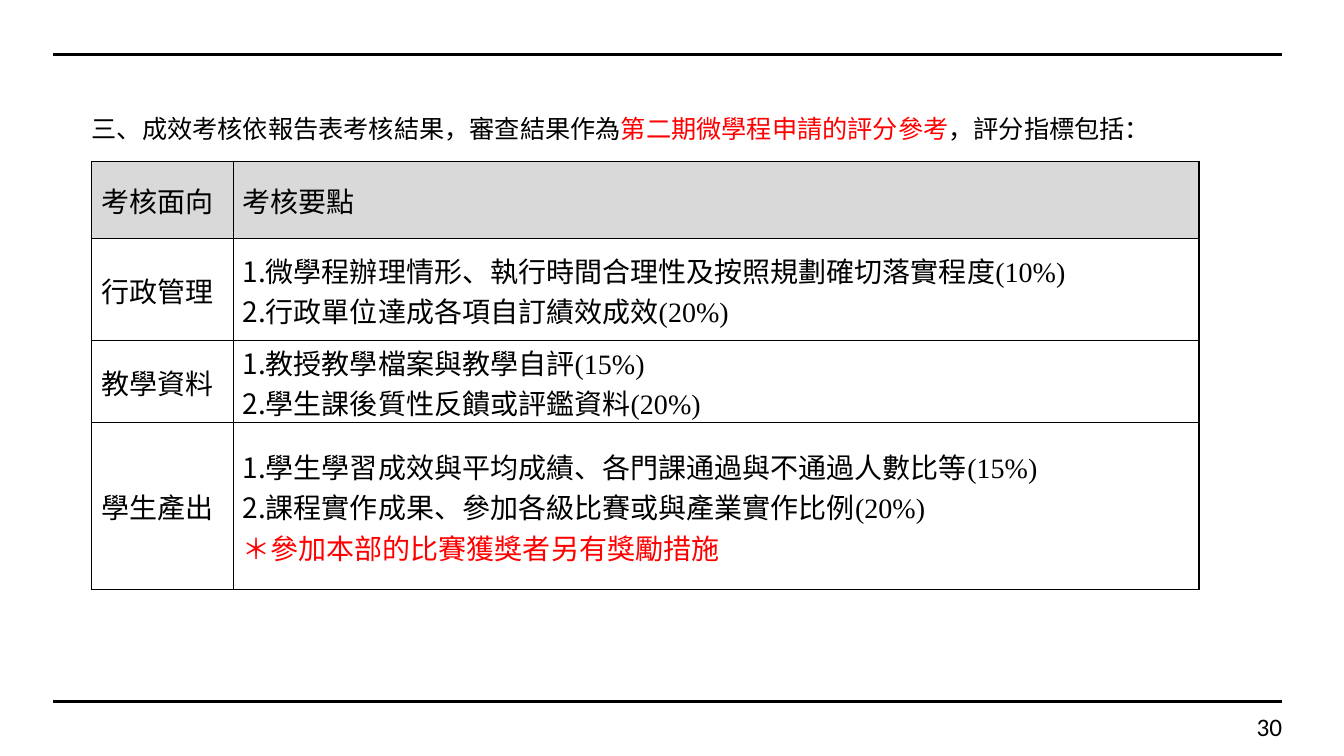
from lxml.etree import SubElement
from pptx import Presentation
from pptx.dml.color import RGBColor
from pptx.enum.shapes import MSO_CONNECTOR
from pptx.enum.text import MSO_ANCHOR, PP_ALIGN
from pptx.oxml import parse_xml
from pptx.oxml.ns import nsdecls, qn
from pptx.util import Pt

COLORS = {"ink": "000000", "accent": "FF0000", "header": "D9D9D9"}
CJK_FONT = "Noto Sans CJK SC"

HEADING = [
    ("三、成效考核依報告表考核結果，審查結果作為", "ink"),
    ("第二期微學程申請的評分參考", "accent"),
    ("，評分指標包括：", "ink"),
]
HEADER = ("考核面向", "考核要點")
CRITERIA = [
    ("行政管理", ["微學程辦理情形、執行時間合理性及按照規劃確切落實程度(10%)",
              "行政單位達成各項自訂績效成效(20%)"], None),
    ("教學資料", ["教授教學檔案與教學自評(15%)",
              "學生課後質性反饋或評鑑資料(20%)"], None),
    ("學生產出", ["學生學習成效與平均成績、各門課通過與不通過人數比等(15%)",
              "課程實作成果、參加各級比賽或與產業實作比例(20%)"],
     "＊參加本部的比賽獲獎者另有獎勵措施"),
]
PAGE_NUMBER = "30"

SLIDE_WIDTH, SLIDE_HEIGHT = 960, 540
RULE_LEFT, RULE_RIGHT = 38.2, 915.8
RULE_TOPS = (39, 501)
TABLE_LEFT, TABLE_TOP = 65.5, 115.2
COLUMN_WIDTHS = (101, 690)
ROW_HEIGHTS = (55.4, 72.7, 55.4, 118.8)
CELL_FORMAT = {
    "vertical_anchor": MSO_ANCHOR.MIDDLE,
    "margin_left": Pt(6.75), "margin_right": Pt(6.75),
    "margin_top": Pt(0.7), "margin_bottom": Pt(0),
}


def add_text(paragraph, text, size, font, color="ink"):
    run = paragraph.add_run()
    run.text = text
    run.font.color.rgb = RGBColor.from_string(COLORS[color])
    for name, value in {"size": Pt(size), "name": font, "bold": False}.items():
        setattr(run.font, name, value)
    SubElement(run.font._element, qn("a:ea"), typeface=CJK_FONT)


def number_paragraph(paragraph):
    properties = paragraph._p.get_or_add_pPr()
    properties.set("marL", "0")
    properties.set("indent", str(-Pt(27.4)))
    SubElement(properties, qn("a:buFont"), typeface=CJK_FONT)
    SubElement(properties, qn("a:buAutoNum"), type="arabicPeriod")


def border_cell(cell):
    for position, side in enumerate("LRTB"):
        cell._tc.get_or_add_tcPr().insert(position, parse_xml(
            f'<a:ln{side} {nsdecls("a")} w="{Pt(1)}"><a:solidFill>'
            f'<a:srgbClr val="{COLORS["ink"]}"/></a:solidFill></a:ln{side}>'))


def fill_cell(cell, lines, fill=None):
    """Write (text, color, numbered) lines into a bordered cell."""
    for name, value in CELL_FORMAT.items():
        setattr(cell, name, value)
    if fill:
        cell.fill.solid()
        cell.fill.fore_color.rgb = RGBColor.from_string(COLORS[fill])
    else:
        cell.fill.background()
    border_cell(cell)
    frame = cell.text_frame
    for index, (text, color, numbered) in enumerate(lines):
        paragraph = frame.add_paragraph() if index else frame.paragraphs[0]
        if numbered:
            number_paragraph(paragraph)
        add_text(paragraph, text, 20, "Times New Roman", color)


def add_rules(slide):
    for top in RULE_TOPS:
        rule = slide.shapes.add_connector(
            MSO_CONNECTOR.STRAIGHT, Pt(RULE_LEFT), Pt(top), Pt(RULE_RIGHT), Pt(top))
        rule.line.width = Pt(2.25)
        rule.line.color.rgb = RGBColor.from_string(COLORS["ink"])
        SubElement(rule._element.spPr, qn("a:effectLst"))


def add_heading(slide):
    heading = slide.shapes.title
    for name, value in {"left": 58.3, "top": 77, "width": 778, "height": 29}.items():
        setattr(heading, name, Pt(value))
    frame = heading.text_frame
    frame.word_wrap = True
    frame.vertical_anchor = MSO_ANCHOR.MIDDLE
    paragraph = frame.paragraphs[0]
    paragraph.alignment = PP_ALIGN.LEFT
    for text, color in HEADING:
        add_text(paragraph, text, 18, CJK_FONT, color)


def add_criteria_table(slide):
    table = slide.shapes.add_table(
        len(ROW_HEIGHTS), len(COLUMN_WIDTHS), Pt(TABLE_LEFT), Pt(TABLE_TOP),
        Pt(sum(COLUMN_WIDTHS)), Pt(sum(ROW_HEIGHTS))).table
    table.first_row = table.horz_banding = False
    for column, width in zip(table.columns, COLUMN_WIDTHS):
        column.width = Pt(width)
    for row, height in zip(table.rows, ROW_HEIGHTS):
        row.height = Pt(height)
    for column, label in enumerate(HEADER):
        fill_cell(table.cell(0, column), [(label, "ink", False)], "header")
    for row, (aspect, points, remark) in enumerate(CRITERIA, start=1):
        lines = [(point, "ink", True) for point in points]
        if remark:
            lines.append((remark, "accent", False))
        fill_cell(table.cell(row, 0), [(aspect, "ink", False)])
        fill_cell(table.cell(row, 1), lines)


def add_page_number(slide):
    page_number = slide.shapes.add_textbox(Pt(890.6), Pt(504.7), Pt(50.4), Pt(29))
    page_number.text_frame.word_wrap = True
    add_text(page_number.text_frame.paragraphs[0], PAGE_NUMBER, 18, "Calibri")


def main():
    presentation = Presentation()
    presentation.slide_width = Pt(SLIDE_WIDTH)
    presentation.slide_height = Pt(SLIDE_HEIGHT)
    slide = presentation.slides.add_slide(presentation.slide_layouts[5])
    add_rules(slide)
    add_heading(slide)
    add_criteria_table(slide)
    add_page_number(slide)
    presentation.save("out.pptx")


if __name__ == "__main__":
    main()
